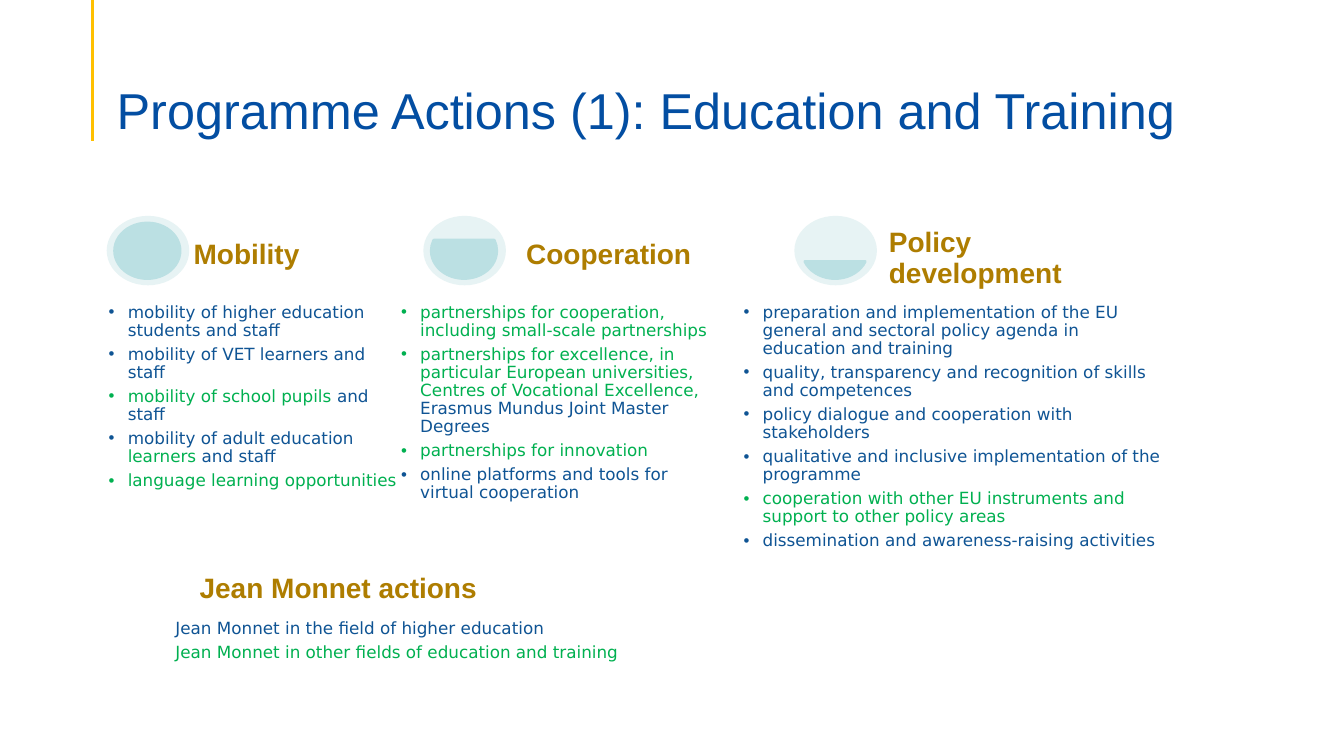
import pptx
import pptx.dml.color
import pptx.enum.shapes
import pptx.enum.text
import pptx.util
from pptx.util import Cm
import lxml.etree

BLUE, GREEN, GOLD, NAVY = "0F5494", "00B050", "AE7D00", "034EA2"
PALE, TEAL, YELLOW = "E7F3F4", "BBE0E3", "FFC000"
ANCHOR = pptx.enum.text.MSO_ANCHOR
SHAPE = pptx.enum.shapes.MSO_SHAPE

COLUMNS = [
    {
        "heading": "Mobility", "heading_box": (4.78, 5.82, 6.15, 1.09),
        "dial": 2.69, "chord": (162, 162),
        "slot": 1, "list_box": (2.69, 7.6, 7.37, 7.42),
        "items": [
            [("mobility of higher education students and staff", BLUE)],
            [("mobility of VET learners and staff", BLUE)],
            [("mobility of school pupils ", GREEN), ("and staff", BLUE)],
            [("mobility of adult education ", BLUE), ("learners ", GREEN), ("and staff", BLUE)],
            [("language learning opportunities", GREEN)],
        ],
    },
    {
        "heading": "Cooperation", "heading_box": (13.16, 5.59, 6.15, 1.32),
        "dial": 10.67, "chord": (204.317, 119.683),
        "slot": 2, "list_box": (10.06, 7.6, 8.28, 7.42),
        "items": [
            [("partnerships for cooperation, including small-scale partnerships", GREEN)],
            [("partnerships for excellence, in particular European universities, "
              "Centres of Vocational Excellence,", GREEN),
             (" Erasmus Mundus Joint Master Degrees", BLUE)],
            [("partnerships for innovation", GREEN)],
            [("online platforms and tools for virtual cooperation", BLUE)],
        ],
    },
    {
        "heading": "Policy development", "heading_box": (22.3, 5.79, 6.15, 1.6),
        "dial": 20.02, "chord": (11.683, 96.317),
        "slot": 4, "list_box": (18.69, 7.6, 10.64, 9.7),
        "items": [
            [("preparation and implementation of the EU general and sectoral policy agenda "
              "in education and training", BLUE)],
            [("quality, transparency and recognition of skills and competences", BLUE)],
            [("policy dialogue and cooperation with stakeholders", BLUE)],
            [("qualitative and inclusive implementation of the programme", BLUE)],
            [("cooperation with other EU instruments and support to other policy areas", GREEN)],
            [("dissemination and awareness-raising activities", BLUE)],
        ],
    },
]


def color(hex_code):
    return pptx.dml.color.RGBColor.from_string(hex_code)


def place(shape, box):
    shape.left, shape.top, shape.width, shape.height = map(Cm, box)


def prepare(frame, anchor=ANCHOR.TOP, insets=(0.25, 0.13, 0.25, 0.13)):
    frame.word_wrap = True
    frame.auto_size = pptx.enum.text.MSO_AUTO_SIZE.NONE
    frame.vertical_anchor = anchor
    (frame.margin_left, frame.margin_top,
     frame.margin_right, frame.margin_bottom) = map(Cm, insets)


def write(paragraph, runs, size=12, font="DejaVu Sans", bold=False, bullet=None,
          margin=0, hanging=0, before=0, after=0, spacing=0.9):
    properties = paragraph._p.get_or_add_pPr()
    properties.set("marL", str(Cm(margin)))
    properties.set("indent", str(-Cm(hanging)))
    marker = lxml.etree.SubElement(
        properties, pptx.oxml.ns.qn("a:buChar" if bullet else "a:buNone"))
    if bullet:
        marker.set("char", bullet)
    paragraph.alignment = pptx.enum.text.PP_ALIGN.LEFT
    paragraph.line_spacing = spacing
    paragraph.space_before = pptx.util.Pt(before)
    paragraph.space_after = pptx.util.Pt(after)
    for text, hex_code in runs:
        run = paragraph.add_run()
        run.text = text
        run.font.size = pptx.util.Pt(size)
        run.font.name = font
        run.font.bold = bold
        run.font.color.rgb = color(hex_code)


def next_paragraph(frame, index):
    return frame.add_paragraph() if index else frame.paragraphs[0]


def add_accent_line(slide):
    accent = slide.shapes.add_connector(
        pptx.enum.shapes.MSO_CONNECTOR.STRAIGHT, Cm(2.34), Cm(0), Cm(2.34), Cm(3.56))
    accent.line.color.rgb = color(YELLOW)
    accent.line.width = pptx.util.Pt(2.25)
    lxml.etree.SubElement(accent._element.spPr, pptx.oxml.ns.qn("a:effectLst"))


def add_title(slide, text):
    title = slide.shapes.title
    place(title, (2.69, 1.35, 29.21, 2.18))
    prepare(title.text_frame, ANCHOR.BOTTOM, (0.25, 0.13, 0.25, 0))
    write(title.text_frame.paragraphs[0], [(text, NAVY)], size=36, font="Arial")


def add_dial(slide, left, chord_angles):
    top = 5.44
    disc = slide.shapes.add_shape(SHAPE.OVAL, Cm(left), Cm(top), Cm(2.08), Cm(1.75))
    level = slide.shapes.add_shape(
        SHAPE.CHORD, Cm(left + 0.2), Cm(top + 0.18), Cm(1.65), Cm(1.4))
    level.adjustments[0], level.adjustments[1] = chord_angles
    for part, fill in ((disc, PALE), (level, TEAL)):
        part.shadow.inherit = False
        part.fill.solid()
        part.fill.fore_color.rgb = color(fill)
    disc.line.fill.background()
    level.line.color.rgb = color(TEAL)
    level.line.width = pptx.util.Pt(2)


def add_heading(slide, text, box):
    heading = slide.shapes.add_textbox(*map(Cm, box))
    prepare(heading.text_frame, ANCHOR.BOTTOM, (0.1,) * 4)
    write(heading.text_frame.paragraphs[0], [(text, GOLD)], size=20, font="Arial", bold=True)


def add_list(slide, slot, box, items):
    body = slide.placeholders[slot]
    place(body, box)
    prepare(body.text_frame, insets=(0.05,) * 4)
    for index, runs in enumerate(items):
        write(next_paragraph(body.text_frame, index), runs,
              bullet="•", margin=0.48, hanging=0.48, after=4.2)


def add_jean_monnet(slide):
    body = slide.placeholders[3]
    place(body, (2.9, 14.35, 23.62, 2.62))
    prepare(body.text_frame)
    write(body.text_frame.paragraphs[0], [("Jean Monnet actions", GOLD)],
          size=20, font="Arial", bold=True, margin=1.88, after=7)
    for text, hex_code in (("Jean Monnet in the field of higher education", BLUE),
                           ("Jean Monnet in other fields of education and training", GREEN)):
        line = body.text_frame.add_paragraph()
        line.level = 1
        write(line, [(text, hex_code)], margin=1.27, before=2.4, spacing=1.0)


def main():
    deck = pptx.Presentation()
    deck.slide_width, deck.slide_height = Cm(33.87), Cm(19.05)
    slide = deck.slides.add_slide(deck.slide_layouts.get_by_name("Comparison"))
    add_accent_line(slide)
    add_title(slide, "Programme Actions (1): Education and Training")
    for column in COLUMNS:
        add_dial(slide, column["dial"], column["chord"])
        add_heading(slide, column["heading"], column["heading_box"])
        add_list(slide, column["slot"], column["list_box"], column["items"])
    add_jean_monnet(slide)
    deck.save("out.pptx")


if __name__ == "__main__":
    main()
